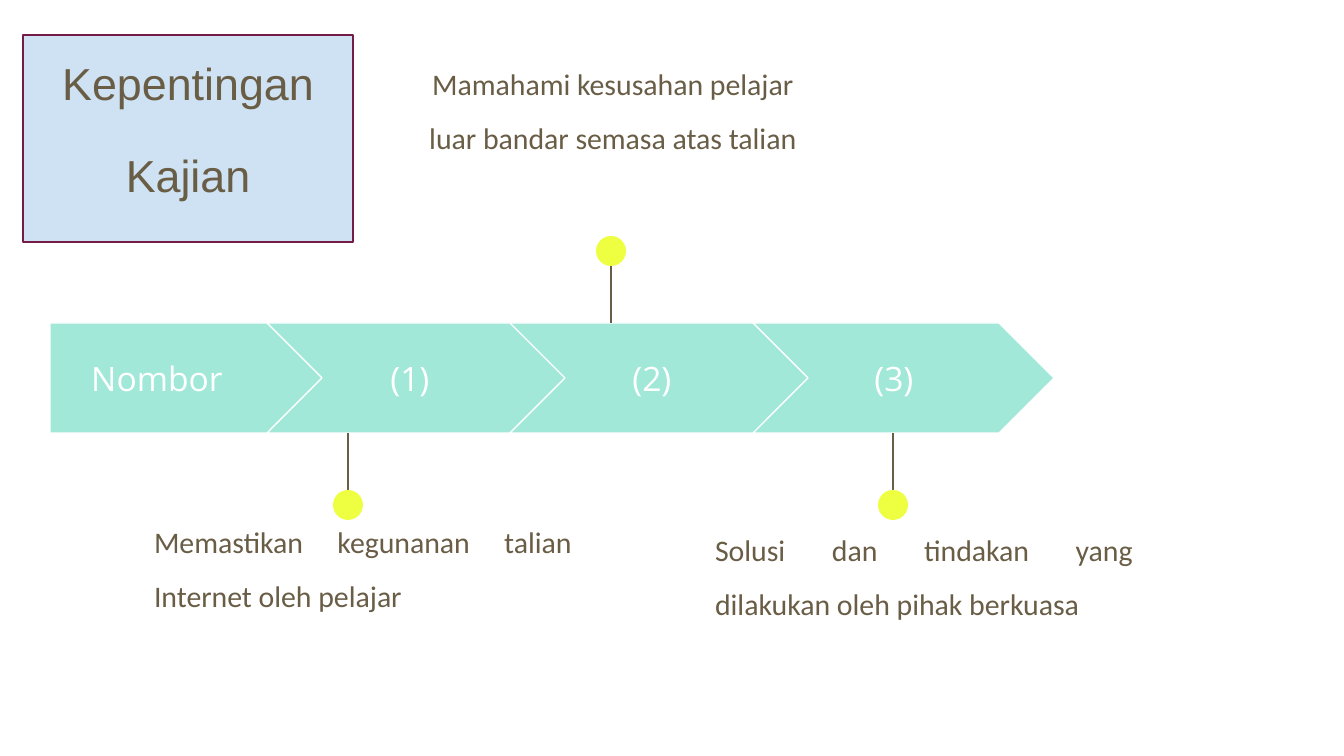
import pptx
import pptx.dml.color
import pptx.enum.shapes
import pptx.enum.text
import pptx.oxml.ns
import pptx.util
import lxml.etree

RGBColor = pptx.dml.color.RGBColor
ShapeType = pptx.enum.shapes.MSO_SHAPE
Align = pptx.enum.text.PP_ALIGN
Anchor = pptx.enum.text.MSO_ANCHOR
Pt = pptx.util.Pt

WHITE = RGBColor(0xFF, 0xFF, 0xFF)
MINT = RGBColor(0xA1, 0xE8, 0xD9)
PALE_BLUE = RGBColor(0xCF, 0xE2, 0xF3)
PLUM = RGBColor(0x74, 0x1B, 0x47)
BROWN = RGBColor(0x69, 0x5D, 0x46)
YELLOW = RGBColor(0xEE, 0xFF, 0x41)

EMU_PER_PX = 914400 / 134.4
LINE_WIDTH = Pt(0.75)
INSET = 13
DOT_SIZE = 30

LABEL_FONT = {"name": "Open Sans", "size": Pt(18)}
TITLE_FONT = {"name": "Arial", "size": Pt(24)}
NOTE_FONT = {"name": "Calibri", "size": Pt(16)}
NOTE_SPACING = {"line_spacing": 1.5, "space_before": Pt(12), "space_after": Pt(12)}


def px(*lengths):
    return [round(length * EMU_PER_PX) for length in lengths]


def apply_format(target, values):
    for name, value in values.items():
        setattr(target, name, value)


class TimelineSlide:
    def __init__(self, presentation):
        self.slide = presentation.slides.add_slide(presentation.slide_layouts[6])

    def shape(self, kind, box, fill, line=None):
        shape = self.slide.shapes.add_shape(kind, *px(*box))
        shape.shadow.inherit = False
        shape.fill.solid()
        shape.fill.fore_color.rgb = fill
        if line is None:
            shape.line.fill.background()
        else:
            shape.line.color.rgb = line
            shape.line.width = LINE_WIDTH
        return shape

    def fill_text(self, shape, paragraphs, font, color, anchor=Anchor.TOP):
        inset = px(INSET)[0]
        frame = shape.text_frame
        apply_format(frame, {
            "word_wrap": True, "vertical_anchor": anchor,
            "margin_left": inset, "margin_right": inset,
            "margin_top": inset, "margin_bottom": inset,
        })
        for index, (text, layout) in enumerate(paragraphs):
            paragraph = frame.add_paragraph() if index else frame.paragraphs[0]
            apply_format(paragraph, layout)
            run = paragraph.add_run()
            run.text = text
            apply_format(run.font, font)
            run.font.color.rgb = color

    def label(self, text, box):
        textbox = self.slide.shapes.add_textbox(*px(*box))
        self.fill_text(textbox, [(text, {"alignment": Align.CENTER})],
                       LABEL_FONT, WHITE, Anchor.MIDDLE)

    def note(self, text, box, alignment):
        textbox = self.slide.shapes.add_textbox(*px(*box))
        self.fill_text(textbox, [(text, {"alignment": alignment, **NOTE_SPACING})],
                       NOTE_FONT, BROWN)

    def pin(self, x, arrow_y, dot_y):
        connector = self.slide.shapes.add_connector(
            pptx.enum.shapes.MSO_CONNECTOR.STRAIGHT,
            *px(x, dot_y, x, arrow_y))
        connector.line.color.rgb = BROWN
        connector.line.width = LINE_WIDTH
        lxml.etree.SubElement(connector._element.spPr, pptx.oxml.ns.qn("a:effectLst"))
        radius = DOT_SIZE // 2
        self.shape(ShapeType.OVAL,
                   (x - radius, dot_y - radius, DOT_SIZE, DOT_SIZE), YELLOW)


def main():
    presentation = pptx.Presentation()
    presentation.slide_width, presentation.slide_height = px(1344, 756)
    timeline = TimelineSlide(presentation)

    title = timeline.shape(ShapeType.RECTANGLE, (23, 35, 330, 207), PALE_BLUE, PLUM)
    title_layout = {"alignment": Align.CENTER, "line_spacing": 1.15}
    spaced_layout = {**title_layout, "space_before": Pt(16), "space_after": Pt(16)}
    timeline.fill_text(title, [("Kepentingan", title_layout), ("Kajian", spaced_layout)],
                       TITLE_FONT, BROWN)

    top, height = 323, 110
    label_top, label_height = 344, 69
    timeline.shape(ShapeType.PENTAGON, (50, top, 275, height), MINT, WHITE)
    timeline.label("Nombor", (50, label_top, 214, label_height))

    steps = [
        ("(1)", "Memastikan kegunanan talian Internet oleh pelajar",
         (141, 493, 444, 192), Align.JUSTIFY, (348, top + height, 505)),
        ("(2)", "Mamahami kesusahan pelajar luar bandar semasa atas talian",
         (415, 35, 396, 181), Align.CENTER, (611, top, 251)),
        ("(3)", "Solusi dan tindakan yang dilakukan oleh pihak berkuasa",
         (702, 501, 444, 156), Align.JUSTIFY, (893, top + height, 505)),
    ]
    for index, (number, text, note_box, alignment, pin) in enumerate(steps):
        timeline.shape(ShapeType.CHEVRON, (267 + 243 * index, top, 301, height), MINT, WHITE)
        timeline.label(number, (313 + 242 * index, label_top, 194, label_height))
        timeline.pin(*pin)
        timeline.note(text, note_box, alignment)

    presentation.save("out.pptx")


if __name__ == "__main__":
    main()
